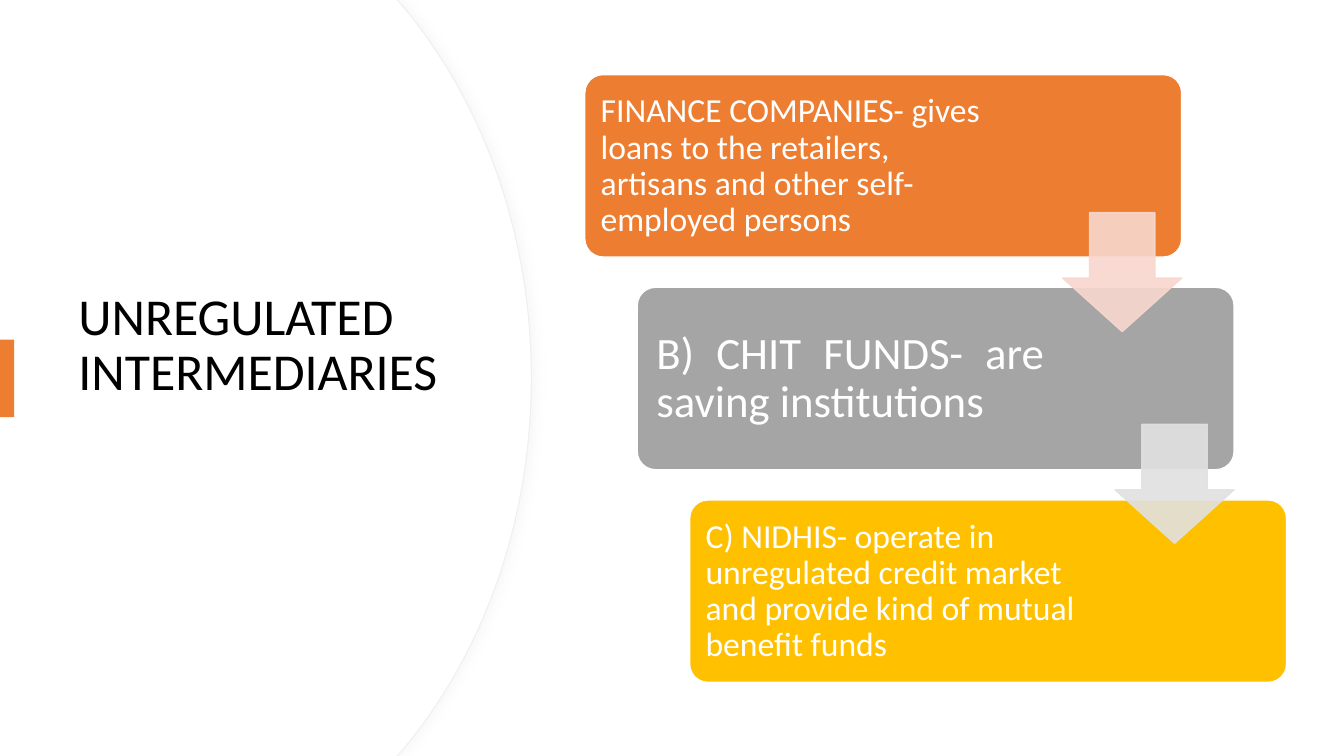
from lxml import etree
from pptx import Presentation
from pptx import util as u
from pptx.dml.color import RGBColor
from pptx.enum import shapes, text
from pptx.oxml import ns

ORANGE, GREY, GOLD, WHITE = "ED7D31", "A5A5A5", "FFC000", "FFFFFF"


def rgb(code):
    return RGBColor.from_string(code)


class Deck:
    """Hold the slide and its style, and draw each kind of element."""

    font = "Calibri"

    def __init__(self):
        self.presentation = Presentation()
        self.presentation.slide_width = u.Inches(13.33)
        self.presentation.slide_height = u.Inches(7.5)
        self.slide = self.presentation.slides.add_slide(self.presentation.slide_layouts[6])

    def paint(self, shape, fill, line=None, width=1, alpha=None):
        shape.shadow.inherit = False
        shape.fill.solid()
        shape.fill.fore_color.rgb = rgb(fill)
        if line:
            shape.line.color.rgb = rgb(line)
            shape.line.width = u.Pt(width)
        else:
            shape.line.fill.background()
        if alpha:
            for color in shape._element.spPr.iter(ns.qn("a:srgbClr")):
                etree.SubElement(color, ns.qn("a:alpha"), val=str(alpha * 1000))

    def shape(self, kind, box, fill, line=None, adjust=(), alpha=None):
        shape = self.slide.shapes.add_shape(kind, *map(u.Inches, box))
        for index, value in enumerate(adjust):
            shape.adjustments[index] = value
        self.paint(shape, fill, line, alpha=alpha)

    def panel(self, edge, line=None):
        """Draw the white panel whose right side bulges out to edge."""
        upper = [(edge - 1.33, 0), (edge - 1.26, 0.08), (edge - 0.48, 1.02), (edge, 2.32)]
        lower = [(x, 7.5 - y) for x, y in reversed(upper)]
        outline = [*upper, (edge, 3.75), *lower, (0, 7.5)]
        builder = self.slide.shapes.build_freeform(0, 0)
        builder.add_line_segments([(u.Inches(x), u.Inches(y)) for x, y in outline])
        shape = builder.convert_to_shape()
        segments = list(shape._element.spPr.iter(ns.qn("a:lnTo")))
        for first in (2, 5):
            curve = etree.Element(ns.qn("a:cubicBezTo"))
            segments[first].addprevious(curve)
            for segment in segments[first:first + 3]:
                curve.append(segment[0])
                segment.getparent().remove(segment)
        self.paint(shape, WHITE, line, 0.75)
        return shape

    def soft_shadow(self, shape, color):
        effects = shape._element.spPr.find(ns.qn("a:effectLst"))
        shadow = etree.SubElement(effects, ns.qn("a:outerShdw"), blurRad=str(u.Pt(7)),
                                  dist=str(u.Pt(3)), dir="0", algn="l", rotWithShape="0")
        tint = etree.SubElement(shadow, ns.qn("a:srgbClr"), val=color)
        etree.SubElement(tint, ns.qn("a:alpha"), val="20000")

    def text(self, box, words, size, color, insets, align=text.PP_ALIGN.LEFT):
        frame = self.slide.shapes.add_textbox(*map(u.Inches, box)).text_frame
        frame.word_wrap = True
        frame.vertical_anchor = text.MSO_ANCHOR.MIDDLE
        (frame.margin_left, frame.margin_top,
         frame.margin_right, frame.margin_bottom) = map(u.Inches, insets)
        frame.text = words
        paragraph = frame.paragraphs[0]
        paragraph.alignment = align
        paragraph.line_spacing = 0.9
        font = paragraph.runs[0].font
        font.name, font.size, font.color.rgb = self.font, u.Pt(size), rgb(color)


def main():
    deck = Deck()
    deck.soft_shadow(deck.panel(5.27, "EFEFEF"), "D9D9D9")
    deck.panel(5.26)
    deck.text((0.68, 1.27, 3.94, 4.95), "UNREGULATED INTERMEDIARIES", 37, "000000",
              (0.1, 0.05, 0.1, 0.67))
    deck.shape(shapes.MSO_SHAPE.RECTANGLE, (0, 3.37, 0.14, 0.77), ORANGE)

    left, justify = text.PP_ALIGN.LEFT, text.PP_ALIGN.JUSTIFY
    intermediaries = [
        ("FINANCE COMPANIES- gives loans to the retailers, artisans and other "
         "self-employed persons", ORANGE, 3.96, 24, 0.1, left),
        ("B) CHIT FUNDS- are saving institutions", GREY, 4.11, 32, 0.13, justify),
        ("C) NIDHIS- operate in unregulated credit market and provide kind of mutual "
         "benefit funds", GOLD, 4.11, 24, 0.1, left),
    ]
    for index, (words, fill, width, size, inset, align) in enumerate(intermediaries):
        x, y = 5.8 + 0.52 * index, 0.74 + 2.11 * index
        deck.shape(shapes.MSO_SHAPE.ROUNDED_RECTANGLE, (x, y, 5.92, 1.81), fill, WHITE, (0.1,))
        deck.text((x + 0.06, y + 0.06, width, 1.7), words, size, WHITE, (inset,) * 4, align)

    for index, tint in enumerate(("F8D7CE", "E1E1E1")):
        deck.shape(shapes.MSO_SHAPE.DOWN_ARROW,
                   (10.54 + 0.52 * index, 2.11 + 2.1 * index, 1.18, 1.18),
                   tint, tint, (0.55, 0.45), 90)
    deck.presentation.save("out.pptx")


if __name__ == "__main__":
    main()
